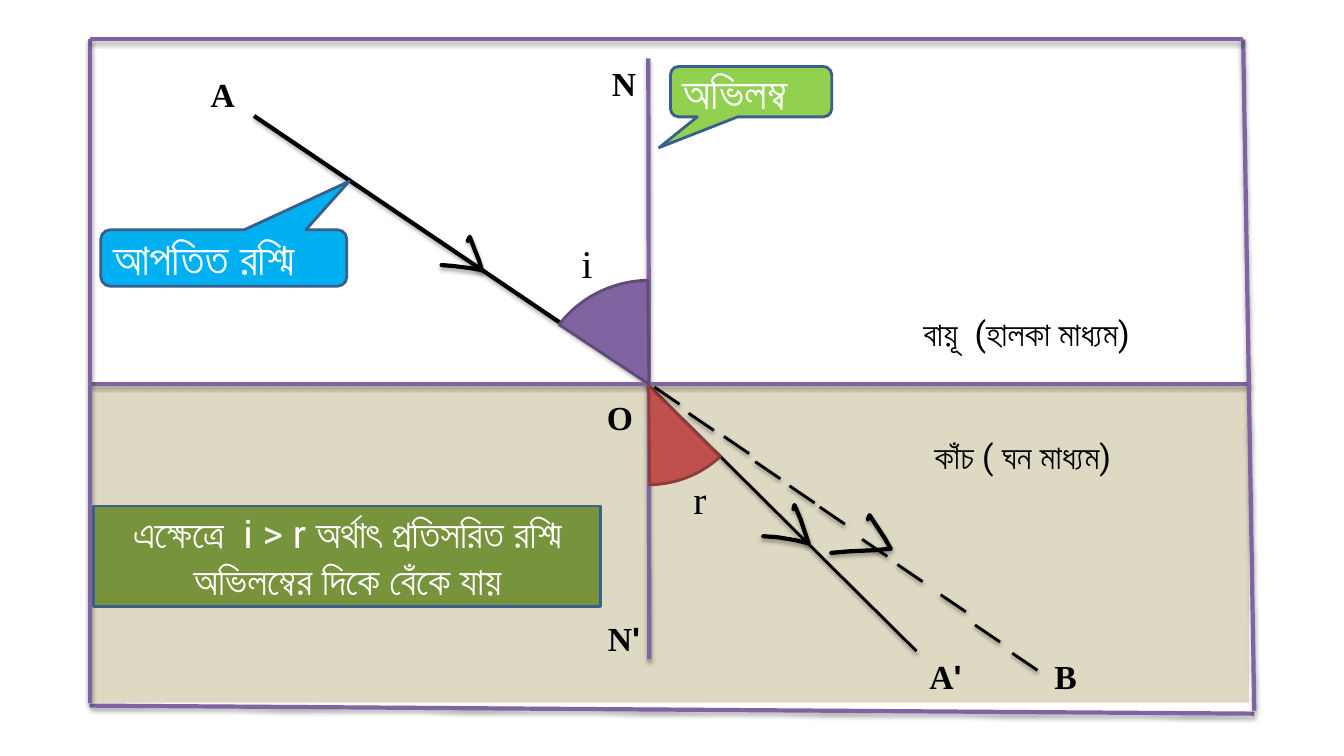
"""Build a slide that shows light refracting from air into glass."""
from dataclasses import dataclass
from lxml import etree
from pptx import Presentation
from pptx.dml.color import RGBColor
from pptx.enum.shapes import MSO_CONNECTOR, MSO_SHAPE
from pptx.enum.text import MSO_ANCHOR, PP_ALIGN
from pptx.oxml.ns import qn
from pptx.util import Pt

PX = 9144
RECTANGLE, PIE = MSO_SHAPE.RECTANGLE, MSO_SHAPE.PIE
CALLOUT = MSO_SHAPE.ROUNDED_RECTANGULAR_CALLOUT
STRAIGHT = MSO_CONNECTOR.STRAIGHT
MIDDLE, TOP = MSO_ANCHOR.MIDDLE, MSO_ANCHOR.TOP
LEFT, CENTER = PP_ALIGN.LEFT, PP_ALIGN.CENTER


@dataclass(frozen=True)
class Theme:
    """Colours, fonts and type sizes."""
    glass: str = "DDD9C3"
    purple: str = "8064A2"
    purple_edge: str = "5F4A78"
    red: str = "C0504D"
    red_edge: str = "8E3B39"
    olive: str = "77933C"
    sky: str = "00B0F0"
    lime: str = "92D050"
    edge: str = "3A5F8C"
    ink: str = "000000"
    white: str = "FFFFFF"
    bangla: str = "Roboto"
    latin: str = "Times New Roman"
    prime: str = "Arial"
    small: int = 24
    medium: int = 28
    large: int = 32


THEME = Theme()
SLIDE_SIZE = (1333, 750)
GLASS = (89, 382, 1150, 315)

NORMAL = (643, 58, 644, 654)
INCIDENT_RAY = (252, 115, 641, 378)
REFRACTED_RAY = (642, 381, 909, 646)
FRAME = [(89, 381, 1239, 381), (89, 700, 1244, 708), (89, 39, 89, 697),
         (1233, 39, 1244, 705), (89, 39, 1233, 39)]
DASH = (25, 17)
DASH_STARTS = [(649, 384), (683, 410), (718, 433), (749, 458), (783, 482), (813, 503),
               (855, 535), (890, 560), (933, 590), (967, 620), (1004, 648)]

# tip, size, tail rise, rotation
ARROWHEADS = [((478, 268), (40, 33), 5, 0),
              ((802, 539), (45, 38), 7, 0),
              ((882, 547), (59, 35), 1, -5)]
BARB_TAIL = [(1, 1), (0.69, 0.8), (0.29, 0.4)]
BARB_SIDE = [(0, 0), (0.08, 0.31), (0.18, 0.62), (0.31, 1), (0.34, 0.89)]

ANGLES = [((534, 278, 219, 206), 174.1, (39.47, 95.37), THEME.purple, THEME.purple_edge),
          ((541, 284, 205, 197), 354.1, (50.89, 95.37), THEME.red, THEME.red_edge)]

CONCLUSION = ((93, 502, 503, 100),
              "এক্ষেত্রে  i > r অর্থাৎ প্রতিসরিত রশ্মি অভিলম্বের দিকে বেঁকে যায়")
CALLOUTS = [((100, 228, 244, 56), (0.51, -1.36), THEME.sky, "আপতিত রশ্মি"),
            ((665, 66, 160, 50), (-0.57, 1.11), THEME.lime, "অভিলম্ব")]
MEDIA = [((906, 306, 260, 50), "বায়ূ  (হালকা মাধ্যম)"),
         ((917, 428, 227, 50), "কাঁচ ( ঘন মাধ্যম)")]
ANGLE_NAMES = [((567, 233, 56, 57), "i"), ((678, 467, 56, 57), "r")]
POINTS = [((199, 68, 47, 50), "A"), ((912, 646, 90, 50), "A'"),
          ((597, 58, 45, 50), "N"), ((593, 608, 81, 50), "N'"),
          ((592, 389, 45, 50), "O"), ((1036, 646, 45, 50), "B")]


def emu(lengths):
    return [round(length * PX) for length in lengths]


def color(code):
    return RGBColor.from_string(code)


def add_shadow(shape, width):
    alpha, distance = (35, 1.8) if width == 3 else (38, 1.6)
    properties = shape._element.spPr
    for old in properties.findall(qn("a:effectLst")):
        properties.remove(old)
    effects = etree.SubElement(properties, qn("a:effectLst"))
    shadow = etree.SubElement(effects, qn("a:outerShdw"), blurRad=str(Pt(3.1)),
                              dist=str(Pt(distance)), dir="5400000", rotWithShape="0")
    shade = etree.SubElement(shadow, qn("a:srgbClr"), val=THEME.ink)
    etree.SubElement(shade, qn("a:alpha"), val=str(alpha * 1000))


def draw_outline(shape, code, width):
    shape.line.color.rgb = color(code)
    shape.line.width = Pt(width)


def add_line(page, ends, code, width):
    line = page.shapes.add_connector(STRAIGHT, *emu(ends))
    draw_outline(line, code, width)
    add_shadow(line, width)


def add_arrowhead(page, tip, size, rise, rotation):
    offsets = [(x * size[0], y * rise) for x, y in BARB_TAIL]
    offsets += [(x * size[0], y * size[1]) for x, y in BARB_SIDE]
    points = [(tip[0] - x, tip[1] - y) for x, y in offsets]
    builder = page.shapes.build_freeform(*points[0], scale=PX)
    builder.add_line_segments(points[1:], close=False)
    head = builder.convert_to_shape()
    head.rotation = rotation
    head.fill.background()
    draw_outline(head, THEME.ink, 3)
    outline = head._element.spPr.find(qn("a:ln"))
    outline.set("cap", "rnd")
    etree.SubElement(outline, qn("a:round"))
    add_shadow(head, 3)


def add_filled(page, kind, place, fill, edge=None, adjustments=()):
    shape = page.shapes.add_shape(kind, *emu(place))
    shape.shadow.inherit = False
    shape.fill.solid()
    shape.fill.fore_color.rgb = color(fill)
    if edge:
        draw_outline(shape, edge, 2)
    else:
        shape.line.fill.background()
    for index, value in enumerate(adjustments):
        shape.adjustments[index] = value
    return shape


def write(shape, text, style, anchor=MIDDLE, align=LEFT):
    frame = shape.text_frame
    frame.word_wrap = True
    frame.vertical_anchor = anchor
    para = frame.paragraphs[0]
    para.alignment = align
    letters = text.rstrip("'")
    for part, face in [(letters, style["name"]), (text[len(letters):], THEME.prime)]:
        if part:
            span = para.add_run()
            span.text = part
            for key, value in {**style, "name": face}.items():
                setattr(span.font, key, value)
            span.font.color.rgb = color(THEME.white if anchor == MIDDLE else THEME.ink)


def main():
    deck = Presentation()
    deck.slide_width, deck.slide_height = emu(SLIDE_SIZE)
    page = deck.slides.add_slide(deck.slide_layouts[6])

    add_filled(page, RECTANGLE, GLASS, THEME.glass)
    add_line(page, NORMAL, THEME.purple, 3)
    add_line(page, INCIDENT_RAY, THEME.ink, 3)
    add_line(page, REFRACTED_RAY, THEME.ink, 2)
    for ends in FRAME:
        add_line(page, ends, THEME.purple, 3)
    for place, rotation, sweep, fill, edge in ANGLES:
        sector = add_filled(page, PIE, place, fill, edge, [angle * 0.6 for angle in sweep])
        sector.rotation = rotation
    for x, y in DASH_STARTS:
        add_line(page, (x, y, x + DASH[0], y + DASH[1]), THEME.ink, 2)
    for arrowhead in ARROWHEADS:
        add_arrowhead(page, *arrowhead)

    place, text = CONCLUSION
    box = add_filled(page, RECTANGLE, place, THEME.olive, THEME.edge)
    write(box, text, {"name": THEME.bangla, "size": Pt(THEME.medium)}, align=CENTER)
    for place, pointer, fill, text in CALLOUTS:
        box = add_filled(page, CALLOUT, place, fill, THEME.edge, pointer)
        write(box, text, {"name": THEME.bangla, "size": Pt(THEME.large)})

    label_groups = [(MEDIA, {"name": THEME.bangla, "size": Pt(THEME.small)}),
                    (ANGLE_NAMES, {"name": THEME.latin, "size": Pt(THEME.medium)}),
                    (POINTS, {"name": THEME.latin, "size": Pt(THEME.small), "bold": True})]
    for labels, style in label_groups:
        for place, text in labels:
            write(page.shapes.add_textbox(*emu(place)), text, style, anchor=TOP)

    deck.save("out.pptx")


if __name__ == "__main__":
    main()
